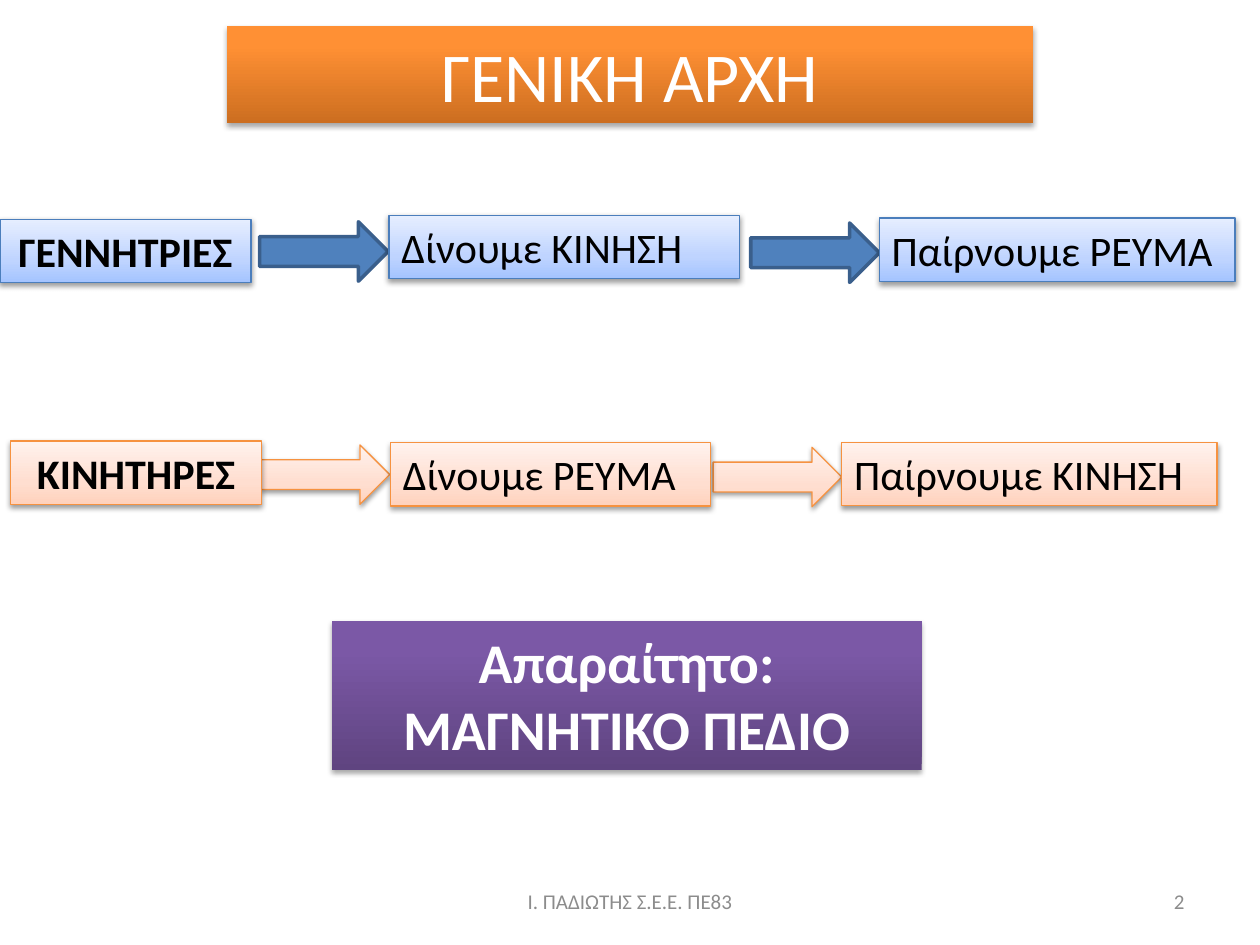
from copy import deepcopy
from lxml import etree
from pptx import Presentation
from pptx.dml.color import RGBColor
from pptx.enum.shapes import MSO_SHAPE as Preset
from pptx.enum.text import MSO_ANCHOR as Anchor, MSO_AUTO_SIZE as AutoSize, PP_ALIGN as Align
from pptx.oxml.ns import qn
from pptx.util import Pt

BLACK = RGBColor(0x00, 0x00, 0x00)
WHITE = RGBColor(0xFF, 0xFF, 0xFF)
GRAY = RGBColor(0x8C, 0x8C, 0x8C)
BLUE = RGBColor(0x4F, 0x81, 0xBD)
BLUE_EDGE = RGBColor(0x3A, 0x5F, 0x8C)
BLUE_LINE = RGBColor(0x4B, 0x7E, 0xBC)
ORANGE_LINE = RGBColor(0xF6, 0x92, 0x40)

# Gradients run from bottom to top: (position, colour)
PALE_BLUE = ((0, RGBColor(0xA4, 0xC4, 0xFF)), (0.35, RGBColor(0xBF, 0xD4, 0xFF)),
             (1, RGBColor(0xE6, 0xEE, 0xFF)))
PALE_ORANGE = ((0, RGBColor(0xFF, 0xD2, 0xBD)), (0.35, RGBColor(0xFF, 0xDE, 0xD0)),
               (1, RGBColor(0xFF, 0xF2, 0xED)))
ORANGE = ((0, RGBColor(0xCC, 0x6E, 0x20)), (0.8, RGBColor(0xFF, 0x90, 0x34)),
          (1, RGBColor(0xFF, 0x91, 0x36)))
PURPLE = ((0, RGBColor(0x5F, 0x44, 0x80)), (0.8, RGBColor(0x7B, 0x58, 0xA6)),
          (1, RGBColor(0x7C, 0x57, 0xA8)))

BOX_HEIGHT = 36.2
ARROW_WIDTH, ARROW_HEIGHT = 73.5, 34


def set_gradient(shape, stops):
    shape.fill.gradient()
    shape.fill.gradient_angle = 90
    stop_list = shape._element.spPr.find(qn("a:gradFill")).find(qn("a:gsLst"))
    stop_list.append(deepcopy(stop_list[0]))
    for stop, (position, color) in zip(shape.fill.gradient_stops, stops):
        stop.position = position
        stop.color.rgb = color


def set_shadow(shape, distance, opacity):
    shape.shadow.inherit = False
    effects = shape._element.spPr.find(qn("a:effectLst"))
    shadow = etree.SubElement(effects, qn("a:outerShdw"), blurRad=str(Pt(3.1)),
                              dist=str(Pt(distance)), dir="5400000", rotWithShape="0")
    color = etree.SubElement(shadow, qn("a:srgbClr"), val="000000")
    etree.SubElement(color, qn("a:alpha"), val=str(opacity * 1000))


def set_line(shape, color, width):
    shape.line.color.rgb = color
    shape.line.width = Pt(width)


def write(shape, text, size, color, bold=False, align=Align.LEFT, anchor=Anchor.TOP):
    frame = shape.text_frame
    frame.text = text
    frame.word_wrap = True
    frame.auto_size = AutoSize.NONE
    frame.vertical_anchor = anchor
    paragraph = frame.paragraphs[0]
    paragraph.alignment = align
    font = paragraph.font
    font.name, font.size, font.bold = "Calibri", Pt(size), bold
    font.color.rgb = color


def add_preset(slide, preset, left, top, width, height):
    return slide.shapes.add_shape(preset, Pt(left), Pt(top), Pt(width), Pt(height))


def style_banner(shape, gradient, text, size, bold=False):
    set_gradient(shape, gradient)
    shape.line.fill.background()
    set_shadow(shape, 1.8, 35)
    write(shape, text, size, WHITE, bold, Align.CENTER)


def add_title(slide, left, top, width, height):
    title = slide.shapes.title
    title.left, title.top, title.width, title.height = map(Pt, (left, top, width, height))
    style_banner(title, ORANGE, "ΓΕΝΙΚΗ ΑΡΧΗ", 40)


def add_chain(slide, left, top, gradient, line_color, boxes, arrows, solid_arrows=False):
    """Place boxes (x, y, width, text) and arrows (x, y) relative to left and top."""
    for x, y in arrows:
        arrow = add_preset(slide, Preset.RIGHT_ARROW, left + x, top + y,
                           ARROW_WIDTH, ARROW_HEIGHT)
        if solid_arrows:
            arrow.fill.solid()
            arrow.fill.fore_color.rgb = BLUE
            set_line(arrow, BLUE_EDGE, 2)
            arrow.shadow.inherit = False
        else:
            set_gradient(arrow, gradient)
            set_line(arrow, line_color, 0.75)
            set_shadow(arrow, 1.6, 38)
    for index, (x, y, width, text) in enumerate(boxes):
        box = add_preset(slide, Preset.RECTANGLE, left + x, top + y, width, BOX_HEIGHT)
        set_gradient(box, gradient)
        set_line(box, line_color, 0.75)
        set_shadow(box, 1.6, 38)
        is_label = index == 0
        write(box, text, 24, BLACK, is_label, Align.CENTER if is_label else Align.LEFT)


def add_requirement(slide, left, top, width, height):
    banner = add_preset(slide, Preset.RECTANGLE, left, top, width, height)
    style_banner(banner, PURPLE, "Απαραίτητο: ΜΑΓΝΗΤΙΚΟ ΠΕΔΙΟ", 32, bold=True)


def add_footer(slide, top, height):
    for left, width, text, align in (
            (246, 228, "Ι. ΠΑΔΙΩΤΗΣ Σ.Ε.Ε. ΠΕ83", Align.CENTER),
            (516, 168, "2", Align.RIGHT)):
        box = slide.shapes.add_textbox(Pt(left), Pt(top), Pt(width), Pt(height))
        write(box, text, 12, GRAY, align=align, anchor=Anchor.MIDDLE)


def main():
    presentation = Presentation()
    presentation.slide_width, presentation.slide_height = Pt(720), Pt(540)
    slide = presentation.slides.add_slide(presentation.slide_layouts[5])
    add_title(slide, 129.6, 15, 460.8, 55.5)
    add_chain(slide, 0, 125, PALE_BLUE, BLUE_LINE,
              boxes=((0, 0.3, 143.5, "ΓΕΝΝΗΤΡΙΕΣ"),
                     (222.3, -2, 200.2, "Δίνουμε ΚΙΝΗΣΗ"),
                     (502.5, -0.4, 203.3, "Παίρνουμε ΡΕΥΜΑ")),
              arrows=((148.3, 1.7), (429, 2.4)), solid_arrows=True)
    add_chain(slide, 6, 252, PALE_ORANGE, ORANGE_LINE,
              boxes=((0, 0, 143.5, "ΚΙΝΗΤΗΡΕΣ"),
                     (217.2, 1, 182.9, "Δίνουμε ΡΕΥΜΑ"),
                     (475, 0.8, 214.5, "Παίρνουμε ΚΙΝΗΣΗ")),
              arrows=((143.2, 2.2), (401.5, 3.6)))
    add_requirement(slide, 189.6, 355, 337, 85)
    add_footer(slide, 500.5, 28.75)
    presentation.save("out.pptx")


if __name__ == "__main__":
    main()
